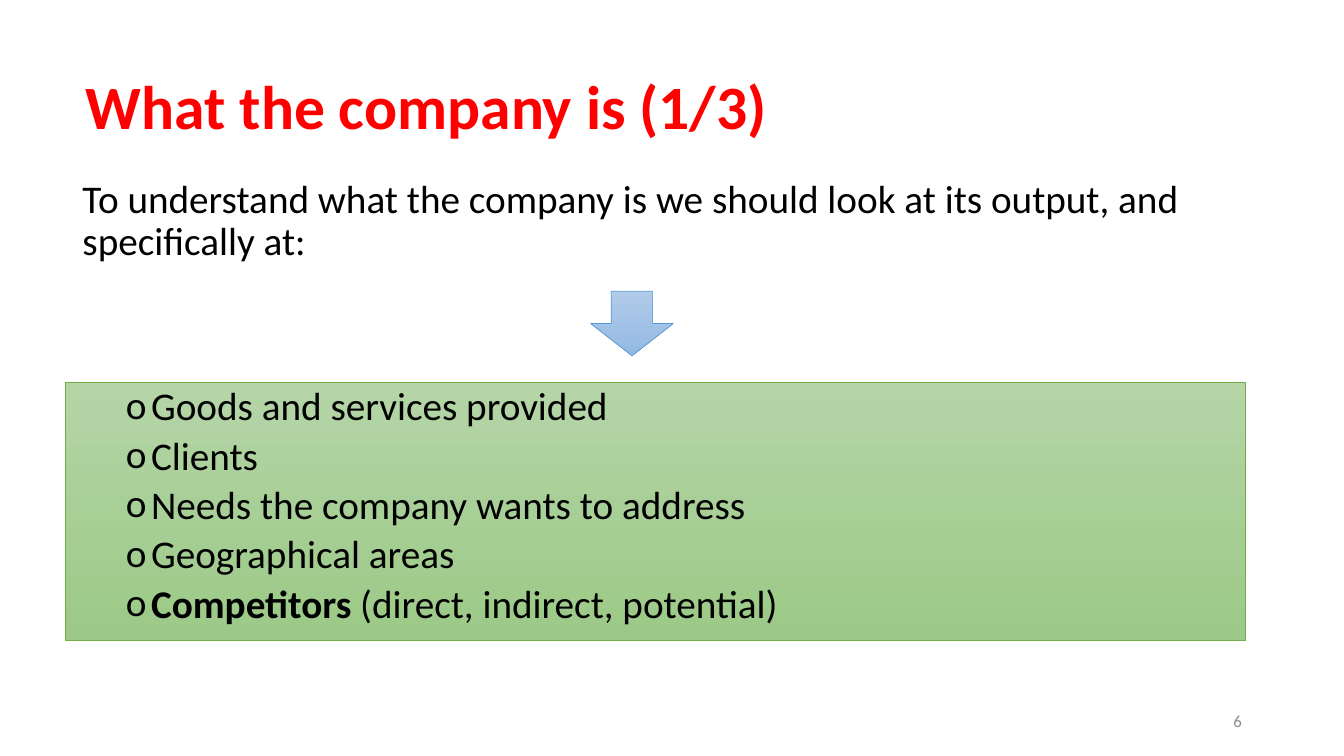
from dataclasses import dataclass

from lxml import etree
from pptx import Presentation
from pptx.dml.color import RGBColor
from pptx.enum.shapes import MSO_SHAPE
from pptx.enum.text import MSO_ANCHOR, MSO_AUTO_SIZE, PP_ALIGN
from pptx.oxml.ns import qn
from pptx.util import Inches, Pt

LEFT, RIGHT = PP_ALIGN.LEFT, PP_ALIGN.RIGHT
TOP, MIDDLE = MSO_ANCHOR.TOP, MSO_ANCHOR.MIDDLE
RECT, ARROW = MSO_SHAPE.RECTANGLE, MSO_SHAPE.DOWN_ARROW
NO_FIT = MSO_AUTO_SIZE.NONE
WIDTH, HEIGHT = Inches(13.33), Inches(7.5)


@dataclass(frozen=True)
class Theme:
    font: str = "Calibri"
    head: str = "FF0000"
    ink: str = "000000"
    muted: str = "8C8C8C"
    green: tuple = ("B5D5A7", "9CC987", "70AD47")
    blue: tuple = ("B1CBE9", "93B9E4", "5B9BD5")
    title: int = 44
    body: int = 28
    small: int = 12
    edge: float = 0.5


THEME = Theme()
TOPICS = (
    (("Goods and services provided", False),),
    (("Clients", False),),
    (("Needs the company wants to address", False),),
    (("Geographical areas", False),),
    (("Competitors", True), (" (direct, indirect, potential)", False)),
)


def area(left, top, width, height):
    return (
        round(WIDTH * left / 100),
        round(HEIGHT * top / 100),
        round(WIDTH * width / 100),
        round(HEIGHT * height / 100),
    )


def set_frame(frame, anchor):
    frame.word_wrap = True
    frame.auto_size = NO_FIT
    frame.vertical_anchor = anchor


def write(para, runs, size, color, align=LEFT, before=0, lead=0.9):
    para.alignment = align
    para.line_spacing = lead
    para.space_before = Pt(before)
    for text, bold in runs:
        run = para.add_run()
        run.text = text
        run.font.name = THEME.font
        run.font.size = Pt(size)
        run.font.bold = bold
        run.font.color.rgb = RGBColor.from_string(color)


def add_bullet(para):
    props = para._p.get_or_add_pPr()
    props.set("lvl", "1")
    props.set("marL", str(Inches(0.75)))
    props.set("indent", str(-Inches(0.25)))
    etree.SubElement(props, qn("a:buFont")).set("typeface", THEME.font)
    etree.SubElement(props, qn("a:buChar")).set("char", "o")


def add_block(slide, kind, box, tones):
    shape = slide.shapes.add_shape(kind, *box)
    shape.shadow.inherit = False
    shape.fill.gradient()
    shape.fill.gradient_angle = 270
    for stop, tone in zip(shape.fill.gradient_stops, tones):
        stop.color.rgb = RGBColor.from_string(tone)
    shape.line.color.rgb = RGBColor.from_string(tones[-1])
    shape.line.width = Pt(THEME.edge)
    return shape


def add_title(slide, box):
    title = slide.shapes.title
    title.left, title.top, title.width, title.height = box
    set_frame(title.text_frame, MIDDLE)
    runs = (("What the company is (1/3)", True),)
    write(title.text_frame.paragraphs[0], runs, THEME.title, THEME.head)


def add_intro(slide, box):
    frame = slide.shapes.add_textbox(*box).text_frame
    set_frame(frame, TOP)
    text = "To understand what the company is we should look at its output, and specifically at:"
    write(frame.paragraphs[0], ((text, False),), THEME.body, THEME.ink, before=10)


def add_topics(slide, box):
    frame = add_block(slide, RECT, box, THEME.green).text_frame
    set_frame(frame, TOP)
    for index, runs in enumerate(TOPICS):
        para = frame.add_paragraph() if index else frame.paragraphs[0]
        write(para, runs, THEME.body, THEME.ink, before=5)
        add_bullet(para)


def add_number(slide, box):
    frame = slide.shapes.add_textbox(*box).text_frame
    set_frame(frame, MIDDLE)
    write(frame.paragraphs[0], (("6", False),), THEME.small, THEME.muted, RIGHT, lead=1.0)


def main():
    deck = Presentation()
    deck.slide_width, deck.slide_height = WIDTH, HEIGHT
    slide = deck.slides.add_slide(deck.slide_layouts.get_by_name("Title Only"))
    add_title(slide, area(5.63, 4.8, 86.25, 19.33))
    add_intro(slide, area(5.4, 23.07, 87.75, 15.33))
    add_topics(slide, area(4.88, 50.53, 87.75, 34.13))
    add_block(slide, ARROW, area(43.95, 38.53, 6.15, 8.53), THEME.blue)
    add_number(slide, area(70.65, 92.67, 22.5, 5.33))
    deck.save("out.pptx")


if __name__ == "__main__":
    main()
